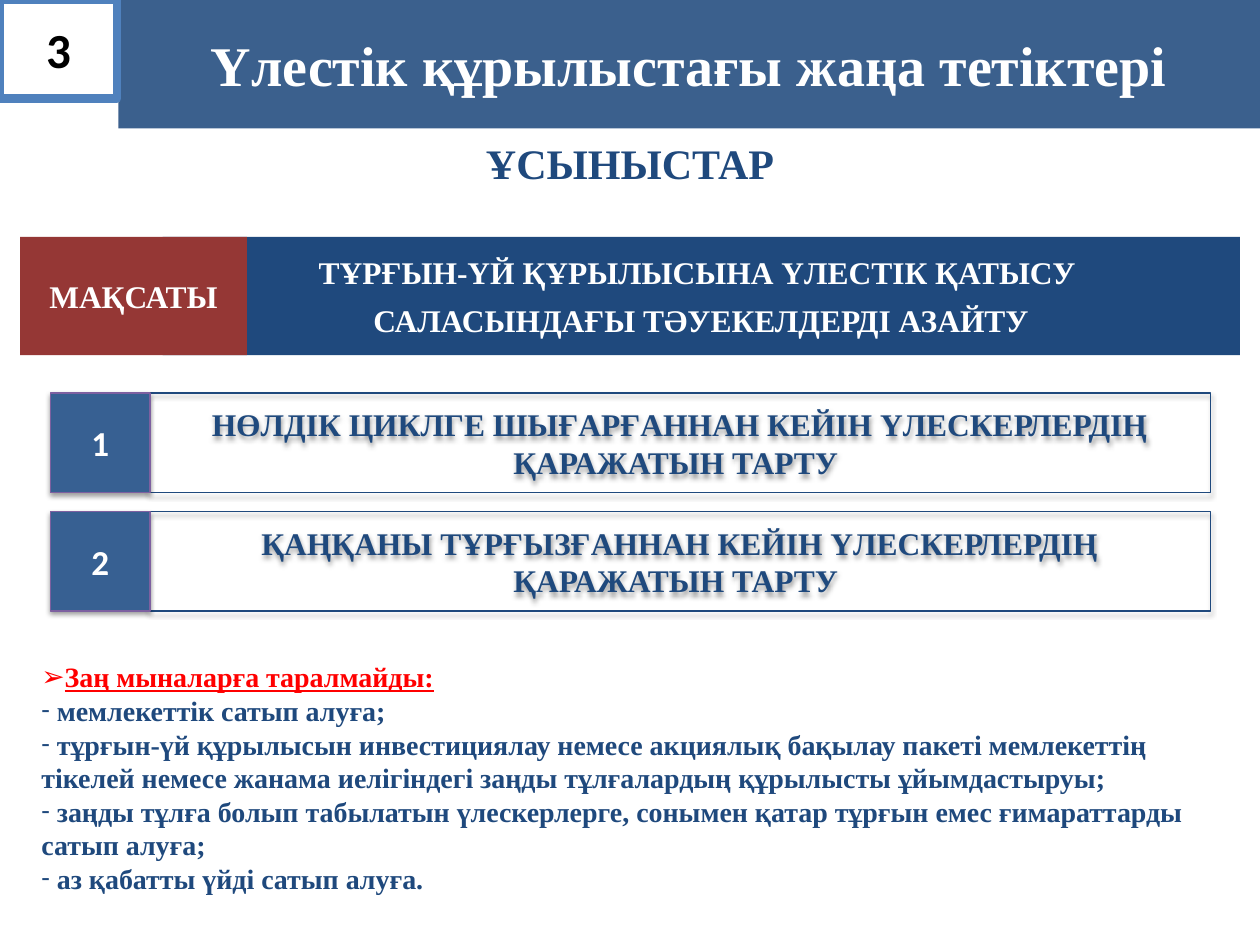
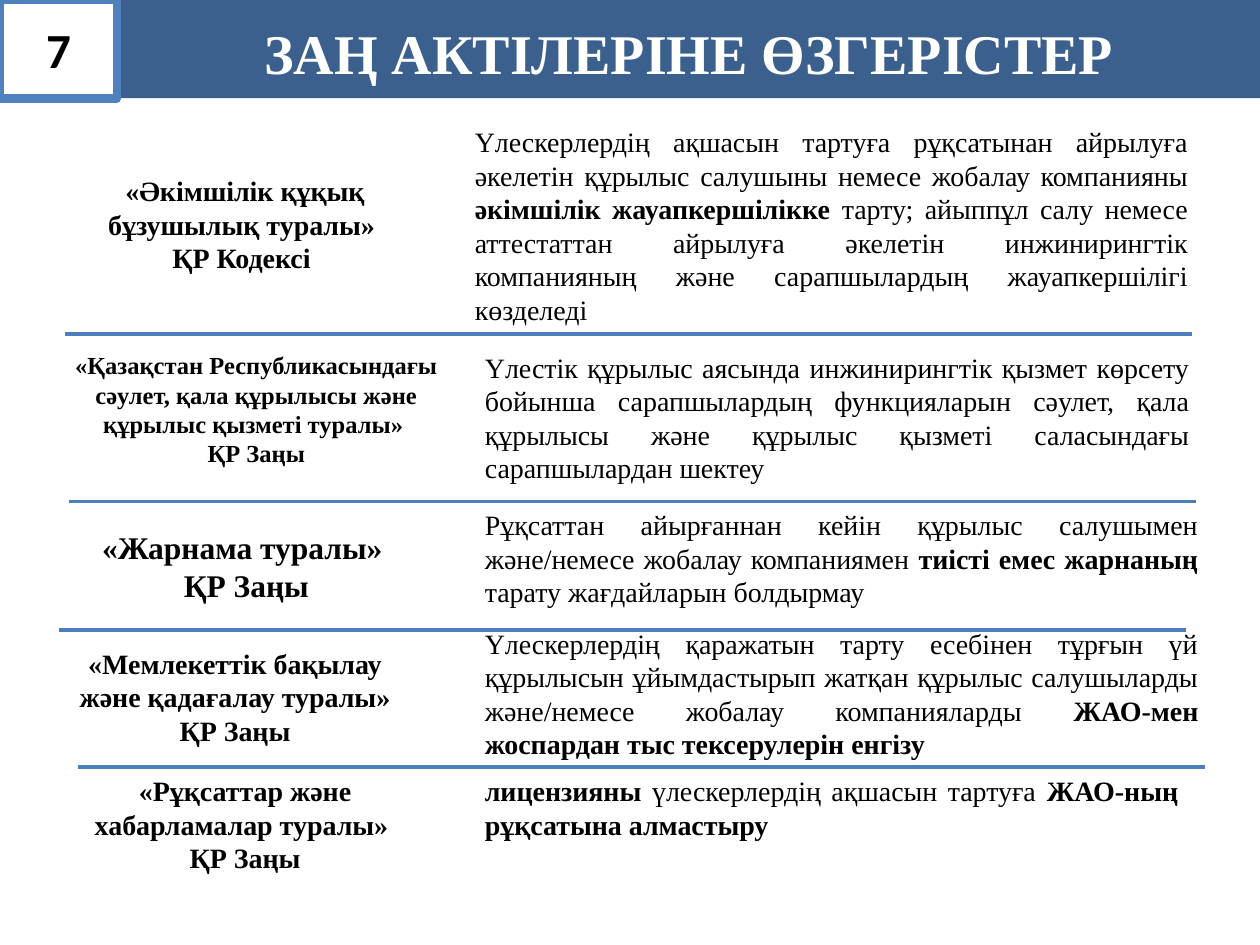
from lxml.etree import SubElement
from pptx import Presentation
from pptx.dml.color import RGBColor
from pptx.enum.shapes import MSO_CONNECTOR, MSO_SHAPE
from pptx.enum.text import MSO_ANCHOR, PP_ALIGN
from pptx.oxml.ns import qn
from pptx.util import Inches, Pt

NAVY, STEEL, MAROON = "1F497D", "376092", "953735"
BLUE, RULE, PURPLE = "4F81BD", "4B7EBC", "7D60A0"
WHITE, BLACK, RED = "FFFFFF", "000000", "FF0000"
SERIF, SANS = "Times New Roman", "Calibri"
CENTER, JUSTIFY, LEFT = PP_ALIGN.CENTER, PP_ALIGN.JUSTIFY, PP_ALIGN.LEFT


def color(value):
    return RGBColor.from_string(value)


class SlideBuilder:
    """Holds the shared style and the slide being built."""

    def __init__(self):
        self.deck = Presentation()
        self.deck.slide_width, self.deck.slide_height = Inches(10), Inches(7.5)
        self.page = None

    def start(self):
        self.page = self.deck.slides.add_slide(self.deck.slide_layouts[6])

    def fill_text(self, box, lines, size, ink=BLACK, bold=True, font=SERIF,
                  align=CENTER, anchor=MSO_ANCHOR.MIDDLE, after=0):
        """Fill a box with paragraphs; text between asterisks is bold."""
        frame = box.text_frame
        frame.word_wrap = True
        frame.vertical_anchor = anchor
        for index, line in enumerate(lines):
            para = frame.paragraphs[0] if index == 0 else frame.add_paragraph()
            para.alignment = align
            para.space_after = Pt(after)
            para.font.name, para.font.size = font, Pt(size)
            para.font.color.rgb = color(ink)
            pieces = line.split("*")
            if len(pieces) == 1:
                para.font.bold = bold
            for number, piece in enumerate(pieces):
                if piece:
                    span = para.add_run()
                    span.text = piece
                    if len(pieces) > 1:
                        span.font.bold = number % 2 == 1
        return frame.paragraphs

    def text(self, place, lines, size, **style):
        box = self.page.shapes.add_textbox(*map(Inches, place))
        return self.fill_text(box, lines, size, **style)

    def block(self, place, lines, size, fill=None, line=None, weight=0.75,
              alpha=None, shadow=False, **style):
        box = self.page.shapes.add_shape(MSO_SHAPE.RECTANGLE, *map(Inches, place))
        box.shadow.inherit = False
        if fill:
            box.fill.solid()
            box.fill.fore_color.rgb = color(fill)
        else:
            box.fill.background()
        if line:
            box.line.color.rgb = color(line)
            box.line.width = Pt(weight)
        else:
            box.line.fill.background()
        properties = box.element.spPr
        if alpha:
            tint = properties.find(qn("a:solidFill")).find(qn("a:srgbClr"))
            SubElement(tint, qn("a:alpha"), val=str(alpha * 1000))
        if shadow:
            cast = SubElement(properties.find(qn("a:effectLst")), qn("a:outerShdw"),
                              blurRad=str(Pt(3.1)), dist=str(Pt(1.6)),
                              dir="5400000", rotWithShape="0")
            shade = SubElement(cast, qn("a:srgbClr"), val=BLACK)
            SubElement(shade, qn("a:alpha"), val="38000")
        return self.fill_text(box, lines, size, **style)

    def header(self, number, title, height, spacing=1.0):
        para = self.block((0.94, 0, 9.06, height), [title], 32, fill=NAVY,
                          alpha=87, ink=WHITE, after=9)[0]
        para.line_spacing = spacing
        layout = para._p.get_or_add_pPr()
        layout.set("marL", str(Inches(0.38)))
        layout.set("indent", str(-Inches(0.38)))
        self.block((0, 0, 0.93, 0.78), [number], 28, line=BLUE, weight=5,
                   font=SANS)

    def bullet(self, para, mark):
        layout = para._p.get_or_add_pPr()
        layout.set("marL", "0")
        layout.set("indent", "0")
        defaults = layout.find(qn("a:defRPr"))
        for tag, key, value in (("a:buFont", "typeface", SANS),
                                ("a:buChar", "char", mark)):
            defaults.addprevious(SubElement(layout, qn(tag), {key: value}))

    def rule(self, left, top, width):
        line = self.page.shapes.add_connector(
            MSO_CONNECTOR.STRAIGHT, Inches(left), Inches(top),
            Inches(left + width), Inches(top))
        line.line.color.rgb = color(RULE)
        line.line.width = Pt(2.25)
        SubElement(line.element.spPr, qn("a:effectLst"))


PROPOSALS = [
    "НӨЛДІК ЦИКЛГЕ ШЫҒАРҒАННАН КЕЙІН ҮЛЕСКЕРЛЕРДІҢ ҚАРАЖАТЫН ТАРТУ ",
    "ҚАҢҚАНЫ ТҰРҒЫЗҒАННАН КЕЙІН ҮЛЕСКЕРЛЕРДІҢ ҚАРАЖАТЫН ТАРТУ ",
]
EXCLUSIONS = [
    "Заң мыналарға таралмайды:",
    " мемлекеттік сатып алуға;",
    " тұрғын-үй құрылысын инвестициялау немесе акциялық бақылау пакеті "
    "мемлекеттің тікелей немесе жанама иелігіндегі заңды тұлғалардың "
    "құрылысты ұйымдастыруы;",
    " заңды тұлға болып табылатын үлескерлерге, сонымен қатар тұрғын емес "
    "ғимараттарды сатып алуға;",
    " аз қабатты үйді сатып алуға.",
]
# Law: place of its name, size, name; place of the change, change
LAWS = [
    ((0.47, 1.33, 2.95, 0.91), 16,
     ["«Әкімшілік құқық бұзушылық туралы» ", "ҚР Кодексі "],
     (3.67, 0.94, 5.86, 1.72),
     "Үлескерлердің ақшасын тартуға рұқсатынан айрылуға әкелетін құрылыс "
     "салушыны немесе жобалау компанияны *әкімшілік жауапкершілікке *тарту; "
     "айыппұл салу немесе аттестаттан айрылуға әкелетін инжинирингтік "
     "компанияның және сарапшылардың жауапкершілігі көзделеді "),
    ((0.47, 2.73, 3.13, 1.04), 14,
     ["«Қазақстан Республикасындағы сәулет, қала құрылысы және құрылыс "
      "қызметі туралы» ", "ҚР Заңы"],
     (3.75, 2.73, 5.79, 1.18),
     "Үлестік құрылыс аясында инжинирингтік қызмет көрсету бойынша "
     "сарапшылардың функцияларын сәулет, қала құрылысы және құрылыс қызметі "
     "саласындағы сарапшылардан шектеу "),
    ((0.47, 4.14, 2.97, 0.71), 18,
     ["«Жарнама туралы» ", "ҚР Заңы"],
     (3.75, 3.98, 5.86, 0.91),
     "Рұқсаттан айырғаннан кейін құрылыс салушымен және/немесе жобалау "
     "компаниямен *тиісті емес жарнаның *тарату жағдайларын болдырмау "),
    ((0.39, 5.08, 2.95, 1.18), 16,
     ["«Мемлекеттік бақылау және қадағалау туралы» ҚР Заңы"],
     (3.75, 4.92, 5.86, 1.18),
     "Үлескерлердің қаражатын тарту есебінен тұрғын үй құрылысын "
     "ұйымдастырып жатқан құрылыс салушыларды және/немесе жобалау "
     "компанияларды *ЖАО-мен жоспардан тыс тексерулерін енгізу *"),
    ((0.47, 6.09, 2.95, 0.91), 16,
     ["«Рұқсаттар және хабарламалар туралы» ", "ҚР Заңы"],
     (3.75, 6.09, 5.7, 0.64),
     "*лицензияны *үлескерлердің ақшасын тартуға *ЖАО-ның рұқсатына алмастыру*"),
]
DIVIDERS = [(0.52, 2.65), (0.55, 3.98), (0.47, 5), (0.62, 6.09)]


def build_proposals(slide):
    slide.start()
    # Goal band
    slide.block((1.29, 1.88, 8.55, 0.94),
                ["ТҰРҒЫН-ҮЙ ҚҰРЫЛЫСЫНА ҮЛЕСТІК ҚАТЫСУ ",
                 "САЛАСЫНДАҒЫ ТӘУЕКЕЛДЕРДІ АЗАЙТУ"],
                18, fill=NAVY, ink=WHITE, after=6)
    slide.block((0.16, 1.88, 1.8, 0.94), ["МАҚСАТЫ"], 18, fill=MAROON, ink=WHITE)
    # Exclusions
    paragraphs = slide.text((0.23, 5.23, 9.45, 1.88), EXCLUSIONS, 16,
                            ink=NAVY, align=LEFT)
    for index, para in enumerate(paragraphs):
        slide.bullet(para, "-" if index else "➢")
    paragraphs[0].font.color.rgb = color(RED)
    paragraphs[0].font.underline = True
    # Numbered proposals
    for index, proposal in enumerate(PROPOSALS):
        top = 3.12 + index * 0.94
        slide.block((1.18, top, 8.43, 0.79), [proposal], 18, line=NAVY,
                    ink=NAVY, shadow=True)
        slide.block((0.4, top, 0.79, 0.79), [str(index + 1)], 20, fill=STEEL,
                    line=PURPLE, ink=WHITE, font=SANS, shadow=True)
    # Headings
    slide.text((0, 0.86, 10, 0.86), ["ҰСЫНЫСТАР"], 24, ink=NAVY)
    slide.header("3", "Үлестік құрылыстағы жаңа тетіктері", 1.02)


def build_laws(slide):
    slide.start()
    slide.header("7", "ЗАҢ АКТІЛЕРІНЕ ӨЗГЕРІСТЕР", 0.78, spacing=1.1)
    # Laws and their changes
    for name_place, size, name, change_place, change in LAWS:
        slide.text(name_place, name, size, anchor=MSO_ANCHOR.TOP)
        slide.text(change_place, [change], 16, bold=False, align=JUSTIFY,
                   anchor=MSO_ANCHOR.TOP)
    # Dividers
    for left, top in DIVIDERS:
        slide.rule(left, top, 8.94)


def main():
    slide = SlideBuilder()
    build_proposals(slide)
    build_laws(slide)
    slide.deck.save("out.pptx")


if __name__ == "__main__":
    main()
